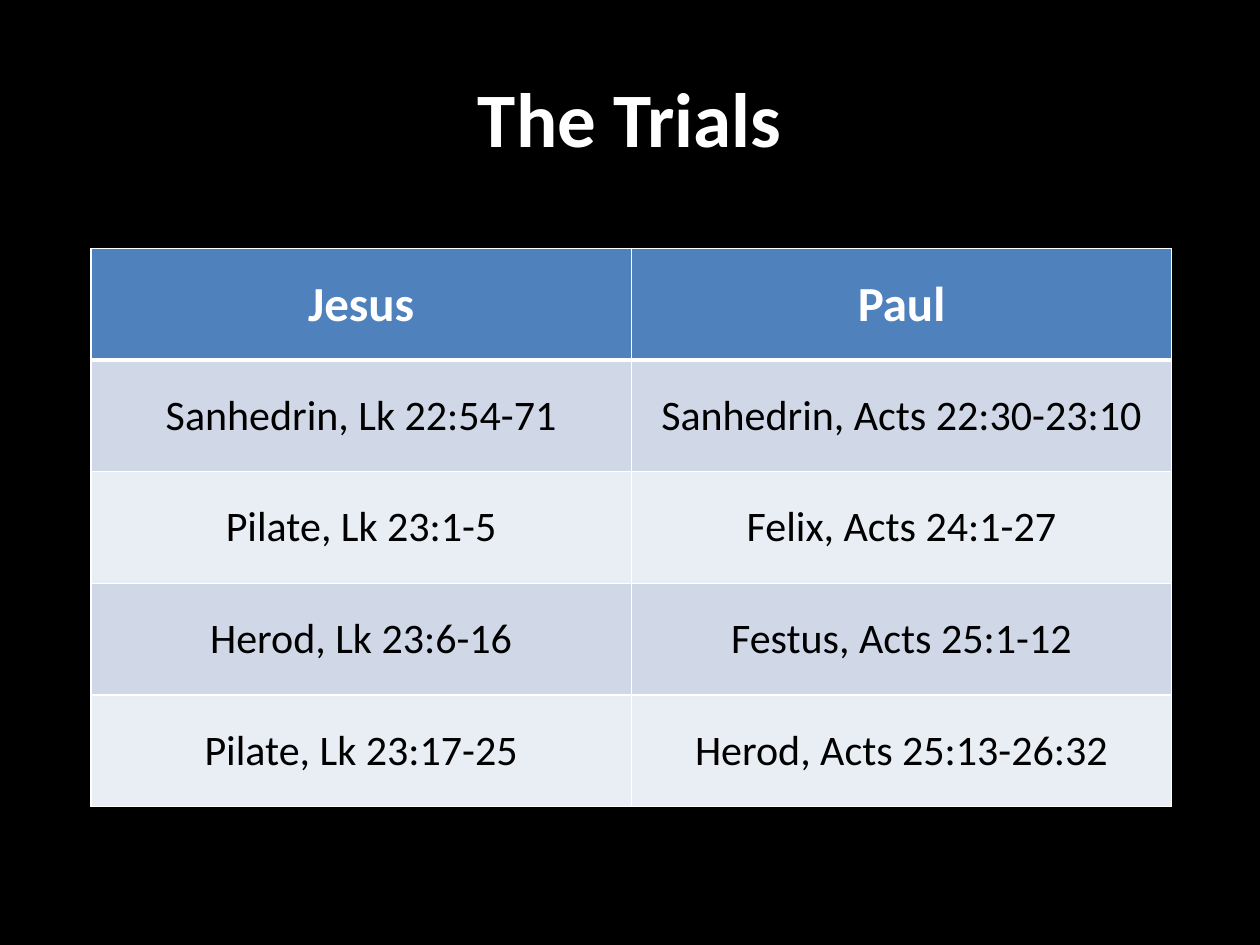
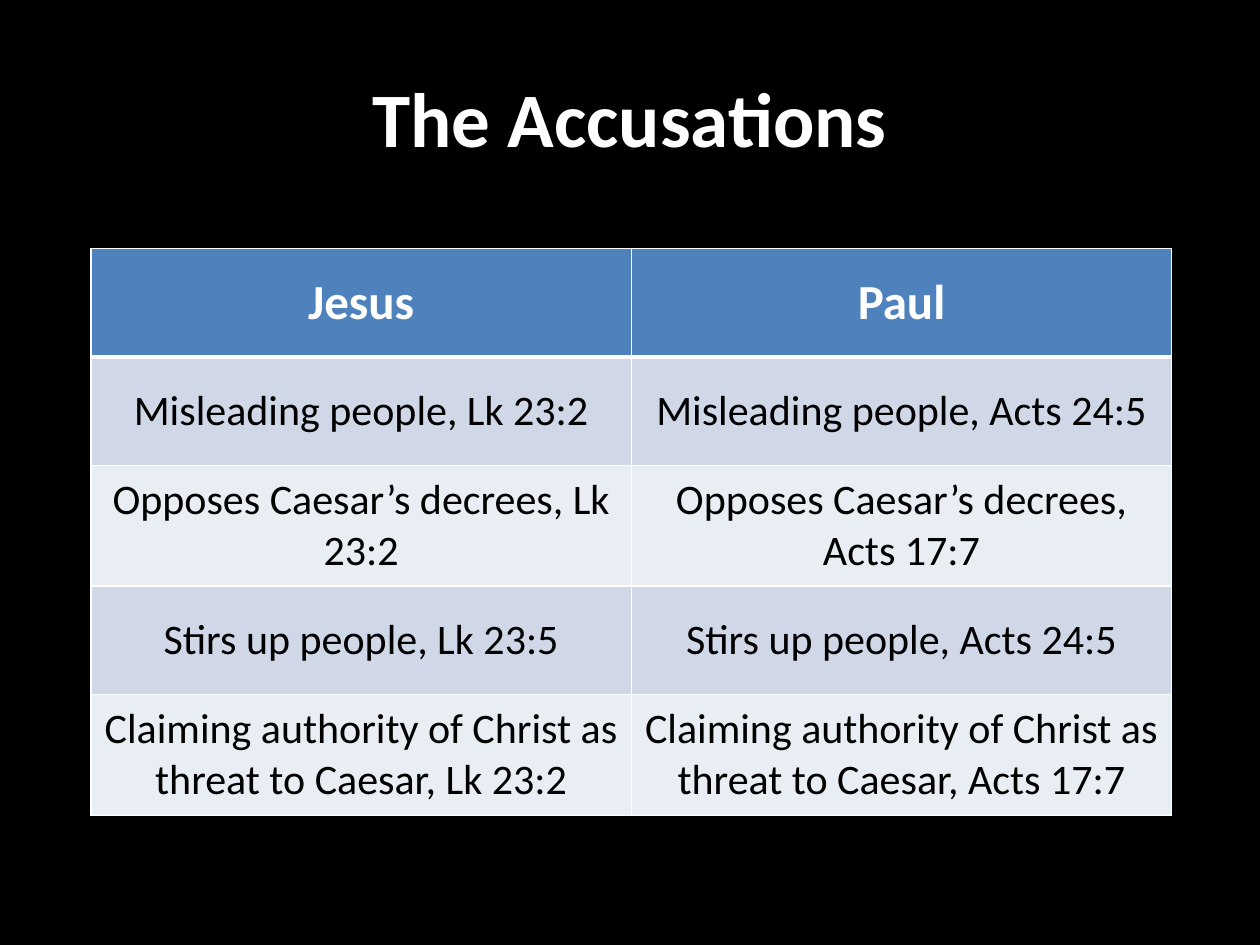
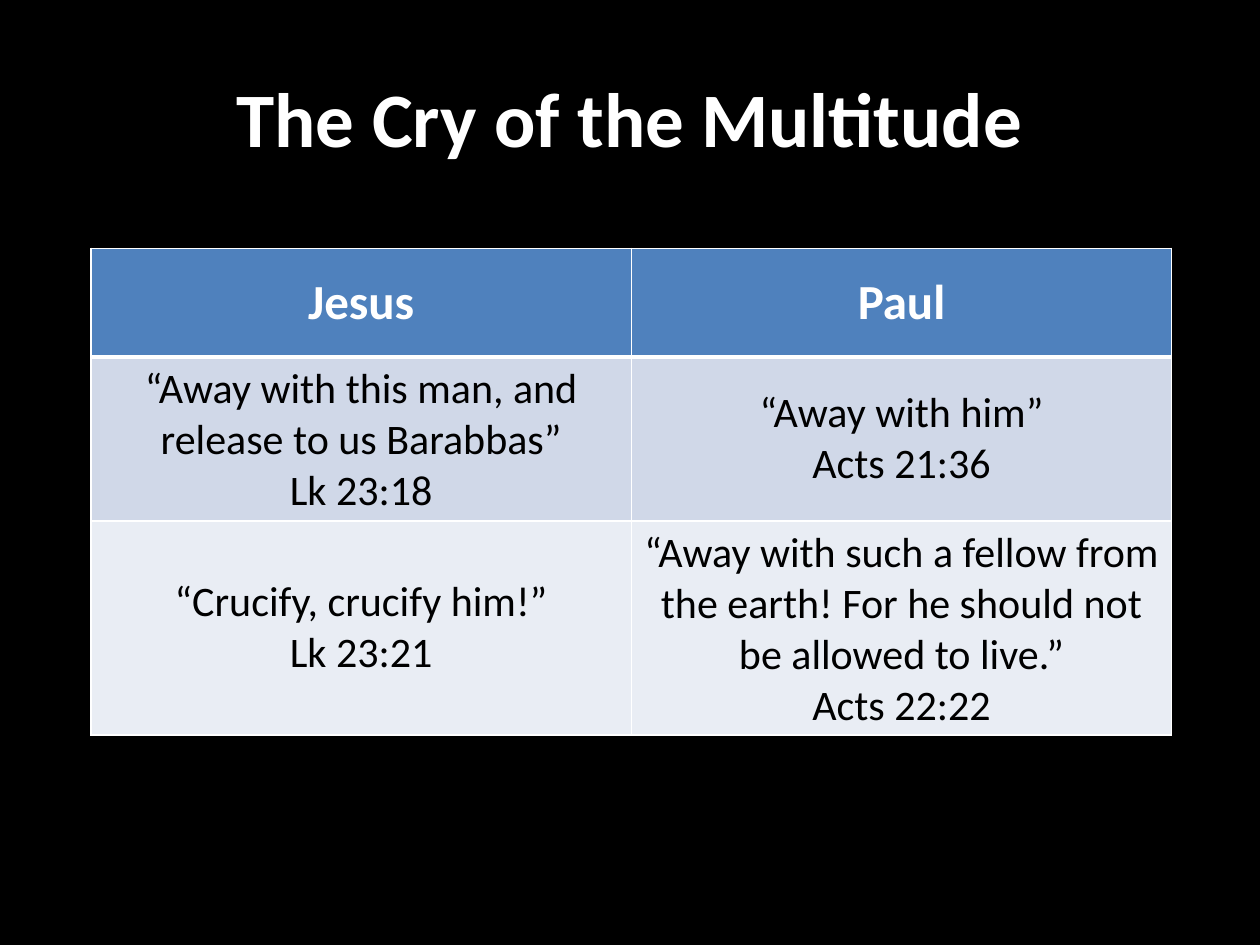
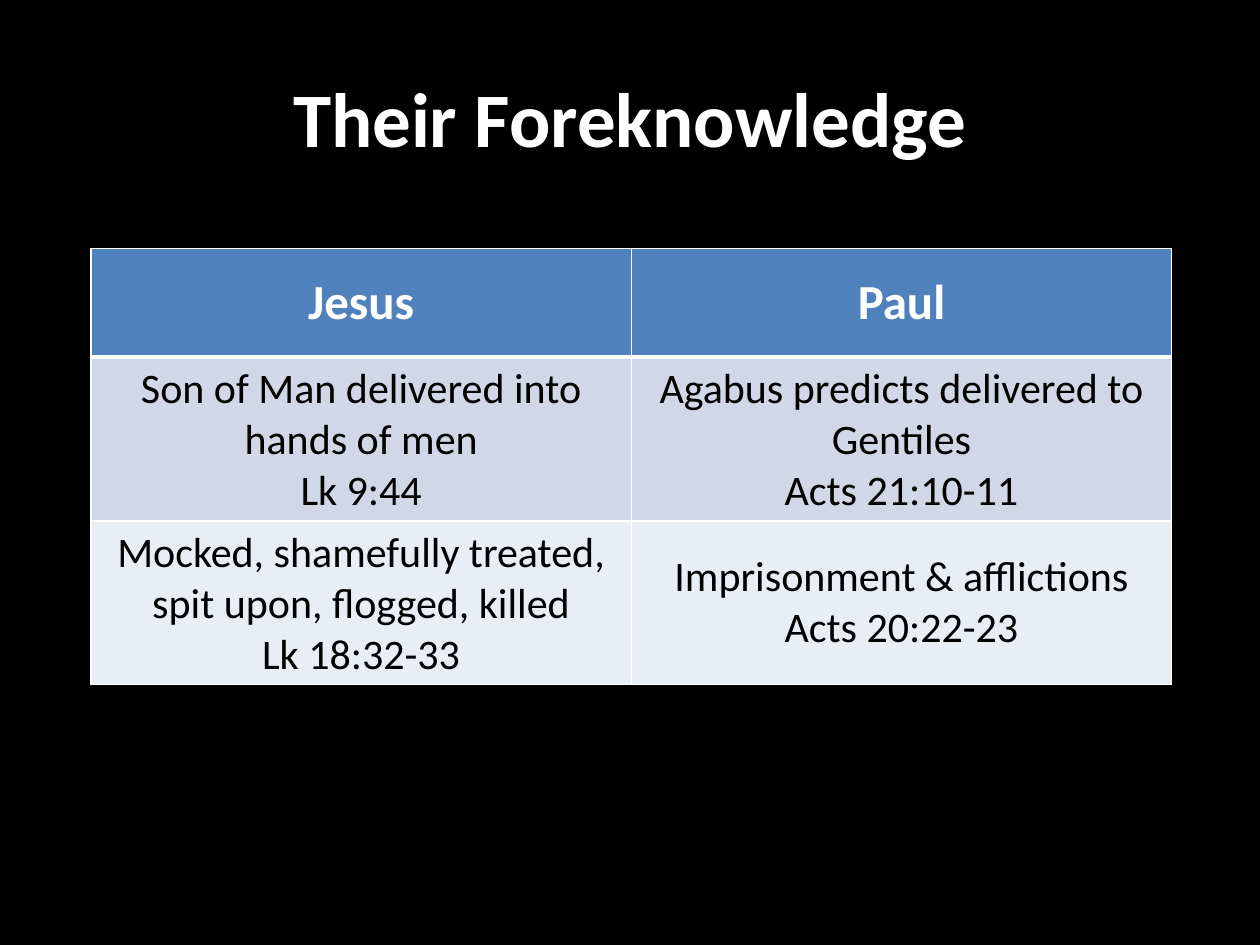
"""Build four slides that set the trials of Jesus and Paul side by side."""
from dataclasses import dataclass

import pptx
import pptx.dml.color
import pptx.enum.text
import pptx.oxml
import pptx.oxml.ns
import pptx.util

Pt = pptx.util.Pt

PEOPLE = ("Jesus", "Paul")

COMPARISONS = [
    {
        "heading": "The Trials",
        "row_heights": (63.8, 63.8, 63.8, 63.8, 63.8),
        "table_height": 319,
        "parallels": [
            ("Sanhedrin, Lk 22:54-71", "Sanhedrin, Acts 22:30-23:10"),
            ("Pilate, Lk 23:1-5", "Felix, Acts 24:1-27"),
            ("Herod, Lk 23:6-16", "Festus, Acts 25:1-12"),
            ("Pilate, Lk 23:17-25", "Herod, Acts 25:13-26:32"),
        ],
    },
    {
        "heading": "The Accusations",
        "row_heights": (62, 62, 69, 62, 69),
        "table_height": 325.2,
        "parallels": [
            ("Misleading people, Lk 23:2", "Misleading people, Acts 24:5"),
            ("Opposes Caesar’s decrees, Lk 23:2", "Opposes Caesar’s decrees, Acts 17:7"),
            ("Stirs up people, Lk 23:5", "Stirs up people, Acts 24:5"),
            ("Claiming authority of Christ as threat to Caesar, Lk 23:2",
             "Claiming authority of Christ as threat to Caesar, Acts 17:7"),
        ],
    },
    {
        "heading": "The Cry of the Multitude",
        "row_heights": (62, 62, 69),
        "table_height": 278,
        "parallels": [
            ("“Away with this man, and release to us Barabbas”\nLk 23:18",
             "“Away with him”\nActs 21:36"),
            ("“Crucify, crucify him!”\nLk 23:21",
             "“Away with such a fellow from the earth! For he should not be allowed to live.”\n"
             "Acts 22:22"),
        ],
    },
    {
        "heading": "Their Foreknowledge",
        "row_heights": (62, 62, 69),
        "table_height": 249,
        "parallels": [
            ("Son of Man delivered into hands of men\nLk 9:44",
             "Agabus predicts delivered to Gentiles\nActs 21:10-11"),
            ("Mocked, shamefully treated, spit upon, flogged, killed\nLk 18:32-33",
             "Imprisonment & afflictions\nActs 20:22-23"),
        ],
    },
]


@dataclass(frozen=True)
class Theme:
    font: str = "Calibri"
    background: str = "000000"
    light: str = "FFFFFF"
    dark: str = "000000"
    header: str = "4F81BD"
    bands: tuple = ("D0D8E8", "E9EDF4")
    heading_size: float = 44
    person_size: float = 28
    parallel_size: float = 24
    rule: float = 1
    header_rule: float = 3


THEME = Theme()
SLIDE_SIZE = (720, 540)
HEADING_BOX = (36, 21.6, 648, 90)
TABLE_LEFT, TABLE_TOP, TABLE_WIDTH = 52, 142, 617.6


def rgb(color):
    return pptx.dml.color.RGBColor.from_string(color)


def write(frame, text, size, color, bold):
    frame.text = text
    for paragraph in frame.paragraphs:
        paragraph.alignment = pptx.enum.text.PP_ALIGN.CENTER
        font = paragraph.font
        font.name, font.size, font.bold = THEME.font, Pt(size), bold
        font.color.rgb = rgb(color)


def draw_borders(cell, row):
    widths = {
        "lnL": THEME.rule,
        "lnR": THEME.rule,
        "lnT": THEME.header_rule if row == 1 else THEME.rule,
        "lnB": THEME.header_rule if row == 0 else THEME.rule,
    }
    properties = cell._tc.get_or_add_tcPr()
    for side, width in widths.items():
        properties.append(pptx.oxml.parse_xml(
            f'<a:{side} {pptx.oxml.ns.nsdecls("a")} w="{Pt(width)}">'
            f'<a:solidFill><a:srgbClr val="{THEME.light}"/></a:solidFill></a:{side}>'))


def add_heading(slide, heading):
    frame = slide.shapes.add_textbox(*map(Pt, HEADING_BOX)).text_frame
    frame.word_wrap = True
    frame.vertical_anchor = pptx.enum.text.MSO_ANCHOR.MIDDLE
    write(frame, heading, THEME.heading_size, THEME.light, True)


def add_parallels(slide, comparison):
    rows = [PEOPLE, *comparison["parallels"]]
    holder = slide.shapes.add_table(
        len(rows), len(PEOPLE), Pt(TABLE_LEFT), Pt(TABLE_TOP),
        Pt(TABLE_WIDTH), Pt(comparison["table_height"]))
    table = holder.table
    for row, (texts, height) in enumerate(zip(rows, comparison["row_heights"])):
        table.rows[row].height = Pt(height)
        for column, text in enumerate(texts):
            cell = table.cell(row, column)
            cell.vertical_anchor = pptx.enum.text.MSO_ANCHOR.MIDDLE
            draw_borders(cell, row)
            cell.fill.solid()
            if row == 0:
                cell.fill.fore_color.rgb = rgb(THEME.header)
                write(cell.text_frame, text, THEME.person_size, THEME.light, True)
            else:
                cell.fill.fore_color.rgb = rgb(THEME.bands[(row - 1) % 2])
                write(cell.text_frame, text, THEME.parallel_size, THEME.dark, False)
    holder.height = Pt(comparison["table_height"])


def main():
    deck = pptx.Presentation()
    deck.slide_width, deck.slide_height = map(Pt, SLIDE_SIZE)
    for comparison in COMPARISONS:
        slide = deck.slides.add_slide(deck.slide_layouts[6])
        slide.background.fill.solid()
        slide.background.fill.fore_color.rgb = rgb(THEME.background)
        add_parallels(slide, comparison)
        add_heading(slide, comparison["heading"])
    deck.save("out.pptx")


if __name__ == "__main__":
    main()
